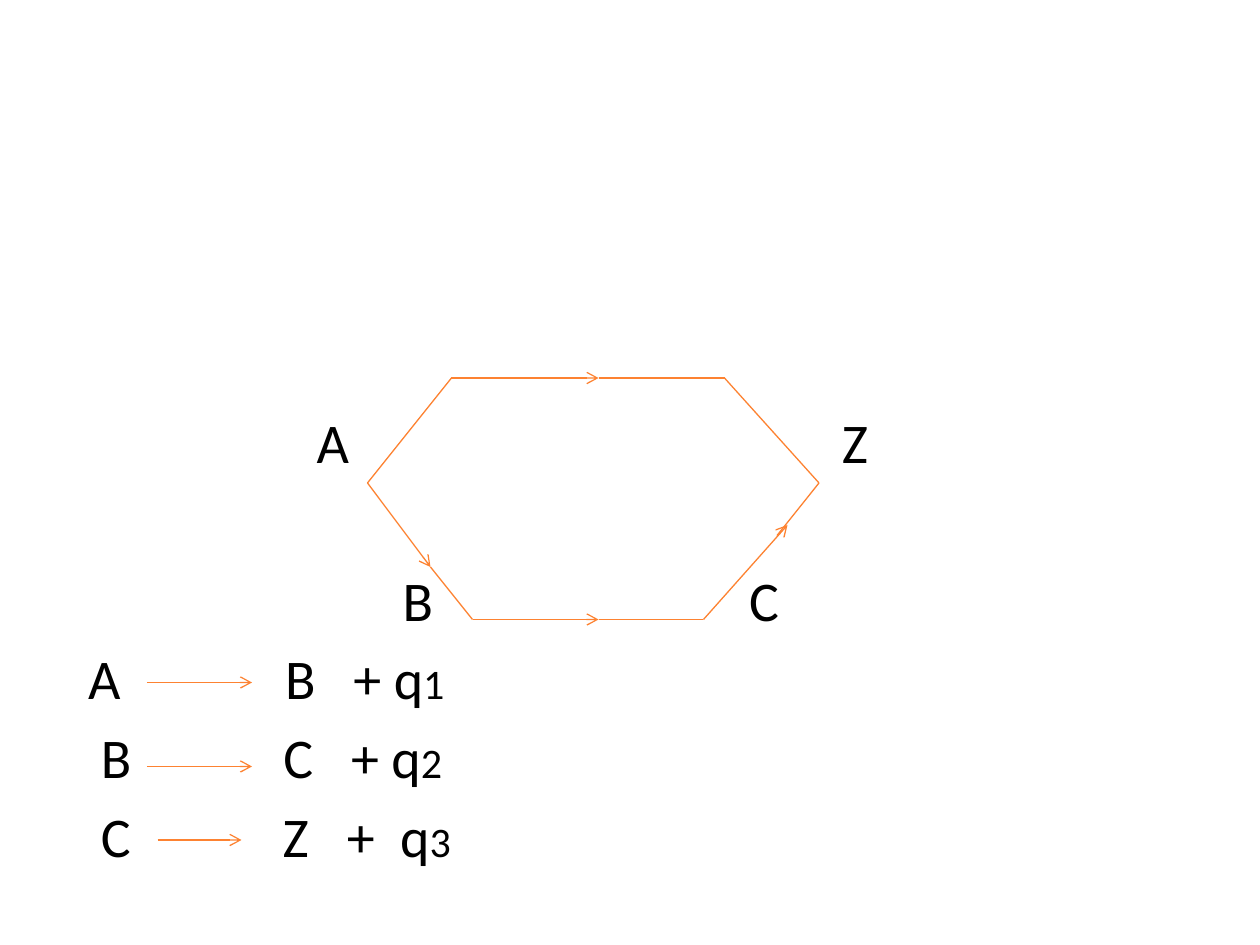
from lxml import etree
from pptx import Presentation
from pptx import util as u
from pptx.dml import color
from pptx.enum import shapes, text
from pptx.oxml import ns


def rgb(code):
    return color.RGBColor.from_string(code)


class Sheet:
    """Holds the style and the current slide, and draws on it."""

    font, size, small = "Calibri", 32, 24
    ink, edge, weight = "000000", "FD8231", 0.75

    def __init__(self, slide):
        self.slide = slide

    def line(self, start, end, arrow=False):
        ends = [u.Pt(v) for v in (*start, *end)]
        link = self.slide.shapes.add_connector(shapes.MSO_CONNECTOR.STRAIGHT, *ends)
        link.line.color.rgb = rgb(self.edge)
        link.line.width = u.Pt(self.weight)
        if arrow:
            etree.SubElement(link.line._get_or_add_ln(), ns.qn("a:tailEnd"), type="arrow")
        etree.SubElement(link._element.spPr, ns.qn("a:effectLst"))

    def label(self, left, top, words, sub="", stops=(), width=40):
        box = self.slide.shapes.add_textbox(*map(u.Pt, (left, top, width, 39)))
        frame = box.text_frame
        frame.word_wrap = True
        frame.vertical_anchor = text.MSO_ANCHOR.TOP
        frame.margin_left = frame.margin_right = 0
        frame.margin_top = frame.margin_bottom = 0
        para = frame.paragraphs[0]
        para.font.name = self.font
        para.font.color.rgb = rgb(self.ink)
        para.font.size = u.Pt(self.size)
        para.add_run().text = words
        if sub:
            run = para.add_run()
            run.text = sub
            run.font.size = u.Pt(self.small)
        if stops:
            tabs = etree.Element(ns.qn("a:tabLst"))
            for stop in stops:
                pos = str(u.Pt(stop - left))
                etree.SubElement(tabs, ns.qn("a:tab"), pos=pos, algn="l")
            para._p.get_or_add_pPr().insert(0, tabs)


def main():
    deck = Presentation()
    deck.slide_width, deck.slide_height = u.Pt(720), u.Pt(540)
    sheet = Sheet(deck.slides.add_slide(deck.slide_layouts[6]))
    first, pitch = 233, 45

    for name, left, row in (("A", 181, 0), ("Z", 481, 0), ("B", 230, 2), ("C", 428, 2)):
        sheet.label(left, first + row * pitch, name)

    steps = (
        ("A", "B", 50.4, (162.9, 202, 225)),
        ("B", "C", 57.6, (161.9, 200.6, 223.7)),
        ("C", "Z", 57.6, (161.5, 198.2, 228.6)),
    )
    for num, (source, goal, left, stops) in enumerate(steps, 1):
        top = first + (num + 2) * pitch
        sheet.label(left, top, f"{source}\t{goal}\t+\tq", str(num), stops, 300)

    start, end = (210, 276), (468, 276)
    upper, lower = (342, 216), (342, 354)
    paths = (
        (start, (246, 324), True),
        ((270, 354), lower, True),
        ((402, 354), (450, 300), True),
        ((246, 324), (270, 354), False),
        (lower, (402, 354), False),
        ((444, 306), end, False),
        ((258, 216), upper, True),
        (start, (258, 216), False),
        (end, (414, 216), False),
        (upper, (414, 216), False),
        ((84, 390), (144, 390), True),
        ((84, 438), (144, 438), True),
        ((90, 480), (138, 480), True),
    )
    for path in paths:
        sheet.line(*path)

    deck.save("out.pptx")


if __name__ == "__main__":
    main()
